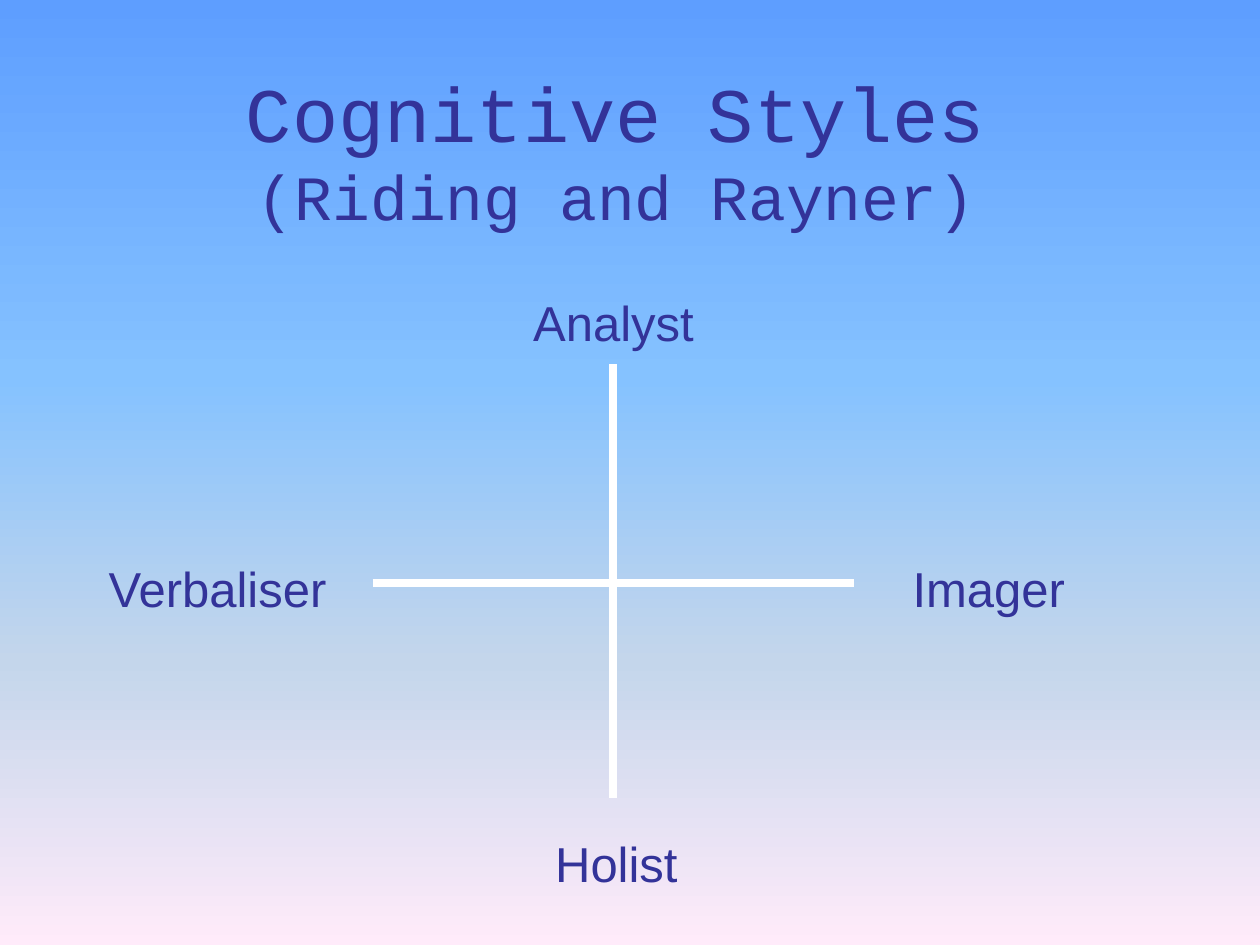
from lxml import etree
from pptx import Presentation
from pptx.dml.color import RGBColor
from pptx.enum.shapes import MSO_CONNECTOR
from pptx.enum.text import MSO_ANCHOR, MSO_AUTO_SIZE, PP_ALIGN
from pptx.oxml.ns import qn
from pptx.util import Pt

INK = "333399"
BACKGROUND_STOPS = [(0, "5E9EFF"), (40, "85C2FF"), (70, "C4D6EB"), (100, "FFEBFA")]


def color(hex_value):
    return RGBColor.from_string(hex_value)


def add_run(paragraph, text, size, font_name):
    run = paragraph.add_run()
    run.text = text
    run.font.size = Pt(size)
    run.font.name = font_name
    run.font.color.rgb = color(INK)


presentation = Presentation()
presentation.slide_width = Pt(720)
presentation.slide_height = Pt(540)
slide = presentation.slides.add_slide(presentation.slide_layouts[5])

# Background: vertical gradient with four stops
fill = slide.background.fill
fill.gradient()
fill.gradient_angle = 270
stop_list = next(slide.background._cSld.iter(qn("a:gsLst")))
for stop in list(stop_list):
    stop_list.remove(stop)
for percent, hex_value in BACKGROUND_STOPS:
    stop = etree.SubElement(stop_list, qn("a:gs"), pos=str(percent * 1000))
    etree.SubElement(stop, qn("a:srgbClr"), val=hex_value)

# Title
title = slide.shapes.title
title.left, title.top, title.width, title.height = Pt(46), Pt(31.5), Pt(612), Pt(108)
title.text_frame.vertical_anchor = MSO_ANCHOR.MIDDLE
title.text_frame.auto_size = MSO_AUTO_SIZE.NONE
paragraph = title.text_frame.paragraphs[0]
paragraph.alignment = PP_ALIGN.CENTER
add_run(paragraph, "Cognitive Styles", 44, "Courier New")
paragraph.add_line_break()
add_run(paragraph, "(Riding and Rayner)", 36, "Courier New")

# Crossing axes: start x, start y, end x, end y
for axis in [(213, 333, 488, 333), (350.5, 456, 350.5, 208)]:
    connector = slide.shapes.add_connector(
        MSO_CONNECTOR.STRAIGHT, *[Pt(value) for value in axis])
    connector.line.color.rgb = color("FFFFFF")
    connector.line.width = Pt(4.5)
    etree.SubElement(connector._element.spPr, qn("a:effectLst"))

# Names of the poles: text, left, top, width
poles = [
    ("Holist", 309.5, 473, 85.5),
    ("Analyst", 297, 163.5, 107),
    ("Imager", 513.5, 315.5, 103),
    ("Verbaliser", 54, 315.5, 140.5),
]
for text, left, top, width in poles:
    label = slide.shapes.add_textbox(Pt(left), Pt(top), Pt(width), Pt(41))
    label.text_frame.word_wrap = False
    label.text_frame.auto_size = MSO_AUTO_SIZE.SHAPE_TO_FIT_TEXT
    paragraph = label.text_frame.paragraphs[0]
    paragraph.alignment = PP_ALIGN.CENTER
    add_run(paragraph, text, 28, "Arial")

presentation.save("out.pptx")
